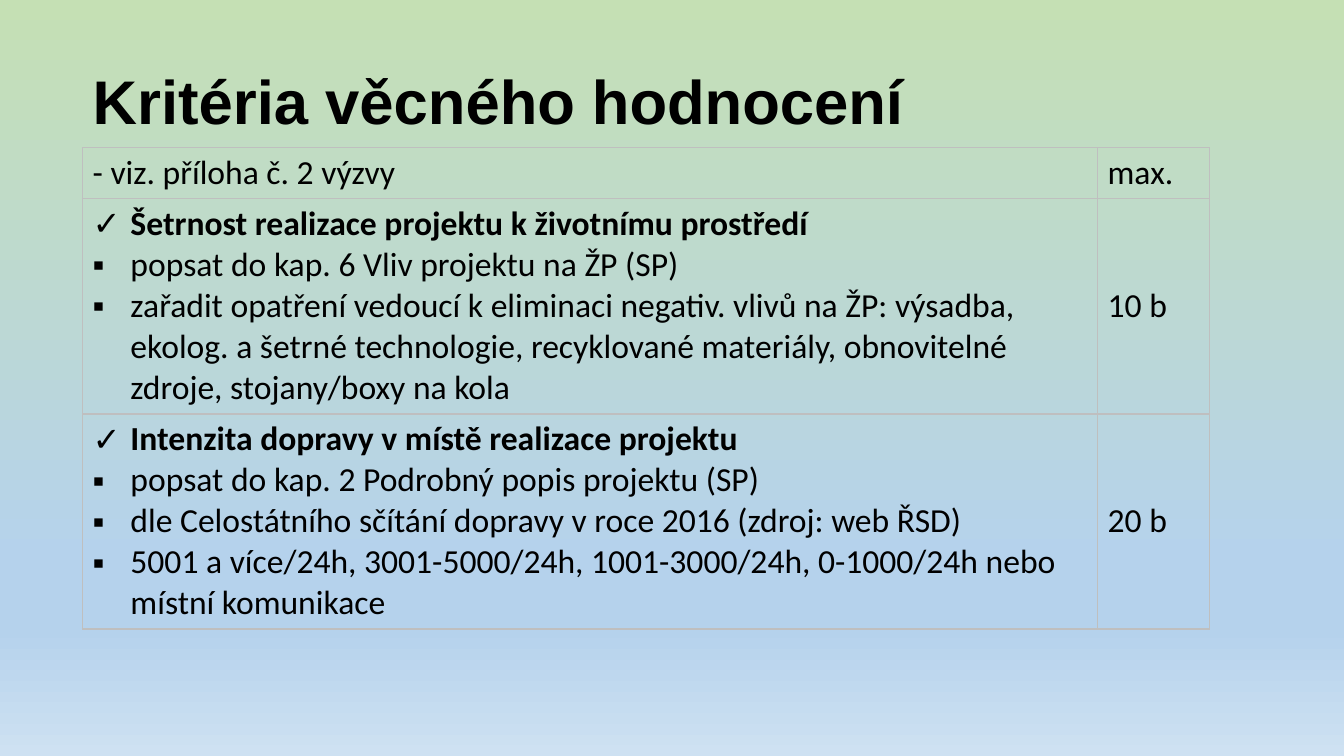
from lxml.etree import SubElement
from pptx import Presentation
from pptx.dml.color import RGBColor
from pptx.enum.text import MSO_ANCHOR, MSO_AUTO_SIZE, PP_ALIGN
from pptx.oxml.ns import qn
from pptx.util import Pt

BLACK = RGBColor(0x00, 0x00, 0x00)
BORDER = RGBColor(0xBF, 0xBF, 0xBF)
GREEN = RGBColor(0xC5, 0xE0, 0xB4)
BLUE = RGBColor(0xB5, 0xD2, 0xEC)
PALE_BLUE = RGBColor(0xCE, 0xE1, 0xF2)
BACKGROUND = [(0, GREEN), (74, BLUE), (83, BLUE), (100, PALE_BLUE)]

TITLE = "Kritéria věcného hodnocení"
HEADER = ("- viz. příloha č. 2 výzvy", "max.")
# heading, points to cover, maximum score
CRITERIA = [
    ("Šetrnost realizace projektu k životnímu prostředí",
     ["popsat do kap. 6 Vliv projektu na ŽP (SP)",
      "zařadit opatření vedoucí k eliminaci negativ. vlivů na ŽP: výsadba, "
      "ekolog. a šetrné technologie, recyklované materiály, obnovitelné "
      "zdroje, stojany/boxy na kola"],
     "10 b"),
    ("Intenzita dopravy v místě realizace projektu",
     ["popsat do kap. 2 Podrobný popis projektu (SP)",
      "dle Celostátního sčítání dopravy v roce 2016 (zdroj: web ŘSD)",
      "5001 a více/24h, 3001-5000/24h, 1001-3000/24h, 0-1000/24h nebo "
      "místní komunikace"],
     "20 b"),
]

TITLE_BOX = dict(left=Pt(59), top=Pt(22.5), width=Pt(828), height=Pt(104.5))
COLUMNS = [Pt(725), Pt(80)]
HEADER_HEIGHT, CRITERION_HEIGHT = Pt(36.5), Pt(153.5)
INDENT = Pt(27)
TITLE_FONT = dict(name="Arial", size=Pt(44), bold=True)
BODY_FONT = dict(name="Calibri", size=Pt(24), bold=False)


def set_font(font, values):
    for name, value in values.items():
        setattr(font, name, value)
    font.color.rgb = BLACK


def set_background(s):
    fill = s.background.fill
    fill.gradient()
    fill.gradient_angle = 270
    stops = s.element.find(".//" + qn("a:gsLst"))
    for stop in list(stops):
        stops.remove(stop)
    for position, color in BACKGROUND:
        stop = SubElement(stops, qn("a:gs"), pos=str(position * 1000))
        SubElement(stop, qn("a:srgbClr"), val=str(color))


def add_bullet(p, mark):
    pPr = p._p.get_or_add_pPr()
    pPr.set("marL", str(INDENT))
    pPr.set("indent", str(-INDENT))
    SubElement(pPr, qn("a:buFont"), typeface="Arial")
    SubElement(pPr, qn("a:buChar"), char=mark)


def fill_cell(cell, lines):
    """Write (text, bullet mark or None, bold) lines into a bordered, clear cell."""
    tcPr = cell._tc.get_or_add_tcPr()
    for side in ("a:lnL", "a:lnR", "a:lnT", "a:lnB"):
        line = SubElement(tcPr, qn(side), w=str(Pt(1)))
        SubElement(SubElement(line, qn("a:solidFill")), qn("a:srgbClr"), val=str(BORDER))
    cell.fill.background()
    cell.vertical_anchor = MSO_ANCHOR.MIDDLE
    tf = cell.text_frame
    for i, (text, mark, bold) in enumerate(lines):
        p = tf.add_paragraph() if i else tf.paragraphs[0]
        if mark:
            add_bullet(p, mark)
        r = p.add_run()
        r.text = text
        set_font(r.font, BODY_FONT | {"bold": bold})


prs = Presentation()
prs.slide_width, prs.slide_height = Pt(960), Pt(540)
s = prs.slides.add_slide(prs.slide_layouts[5])
set_background(s)

title = s.shapes.title
for name, value in TITLE_BOX.items():
    setattr(title, name, value)
tf = title.text_frame
tf.text = TITLE
tf.auto_size = MSO_AUTO_SIZE.NONE
tf.vertical_anchor = MSO_ANCHOR.MIDDLE
p = tf.paragraphs[0]
p.alignment = PP_ALIGN.LEFT
p.line_spacing = 0.9
set_font(p.runs[0].font, TITLE_FONT)

heights = [HEADER_HEIGHT] + [CRITERION_HEIGHT] * len(CRITERIA)
table = s.shapes.add_table(len(heights), len(COLUMNS), Pt(59), Pt(105.5),
                           sum(COLUMNS), sum(heights)).table
table.first_row = table.horz_banding = False
for column, width in zip(table.columns, COLUMNS):
    column.width = width
for row, height in zip(table.rows, heights):
    row.height = height

rows = [[[(text, None, False)] for text in HEADER]]
for heading, points, score in CRITERIA:
    description = [(heading, "✓", True)] + [(point, "▪", False) for point in points]
    rows.append([description, [(score, None, False)]])
for row, contents in zip(table.rows, rows):
    for cell, lines in zip(row.cells, contents):
        fill_cell(cell, lines)

prs.save("out.pptx")
